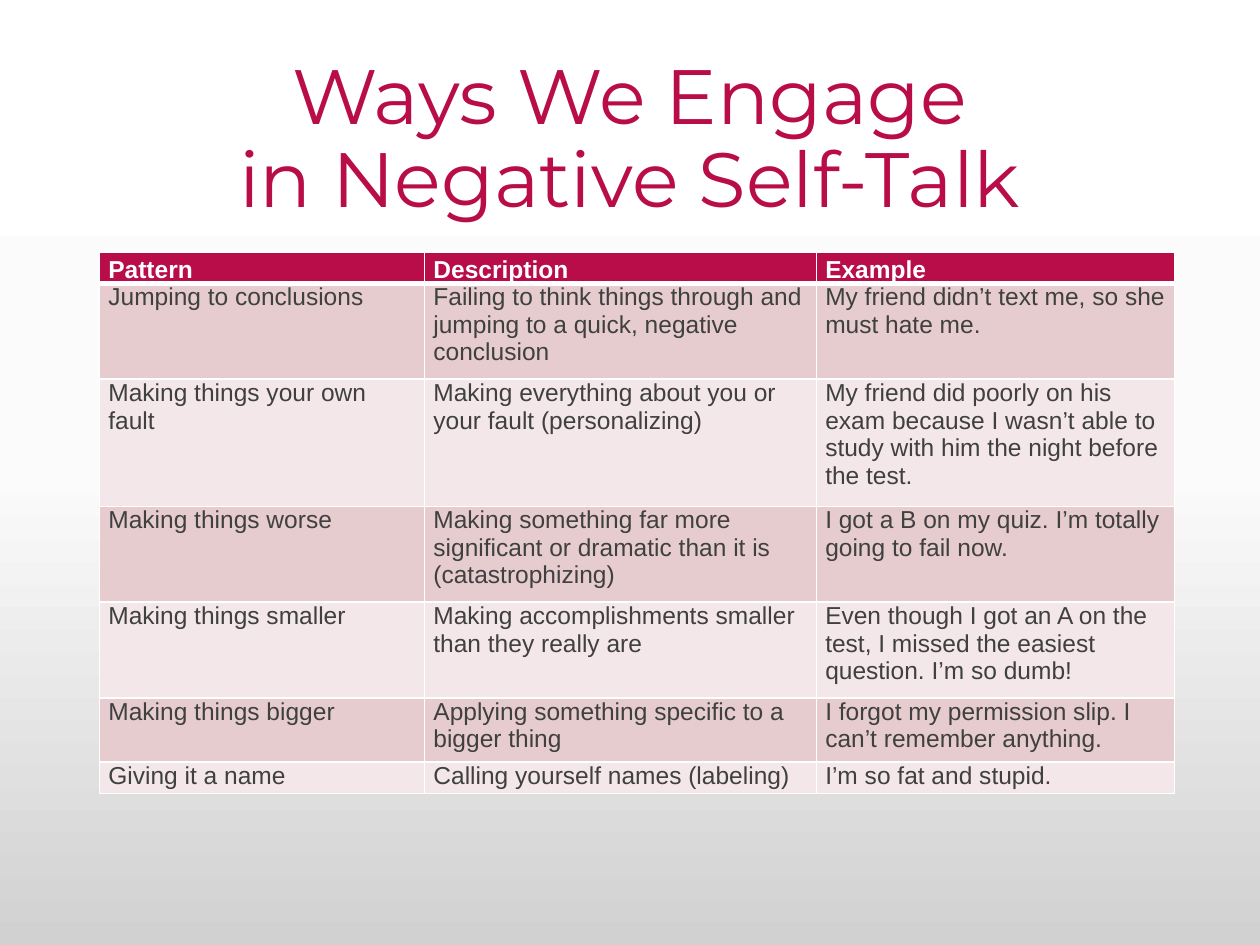
from copy import deepcopy

from lxml import etree
from pptx import Presentation
from pptx import util as u
from pptx.dml.color import RGBColor
from pptx.enum import text
from pptx.oxml.ns import qn

SLIDE_W, SLIDE_H = 10, 7.5
COLORS = {
    "crimson": "B80D48", "white": "FFFFFF", "ink": "3F403F",
    "band_dark": "E6CCCF", "band_light": "F3E7E9",
    "mist": "FBFBFB", "grey": "D1D1D1",
}
TITLE_LINES = ["Ways We Engage", "in Negative Self-Talk"]
COLUMN_WIDTHS = [2.58, 3.11, 2.84]
ROW_HEIGHTS = [0.25, 0.76, 1.01, 0.76, 0.76, 0.51, 0.25]
PATTERNS = [
    ("Pattern", "Description", "Example"),
    ("Jumping to conclusions",
     "Failing to think things through and jumping to a quick, negative conclusion",
     "My friend didn’t text me, so she must hate me."),
    ("Making things your own fault",
     "Making everything about you or your fault (personalizing)",
     "My friend did poorly on his exam because I wasn’t able to study with him "
     "the night before the test."),
    ("Making things worse",
     "Making something far more significant or dramatic than it is (catastrophizing)",
     "I got a B on my quiz. I’m totally going to fail now."),
    ("Making things smaller",
     "Making accomplishments smaller than they really are",
     "Even though I got an A on the test, I missed the easiest question. I’m so dumb!"),
    ("Making things bigger",
     "Applying something specific to a bigger thing",
     "I forgot my permission slip. I can’t remember anything."),
    ("Giving it a name",
     "Calling yourself names (labeling)",
     "I’m so fat and stupid."),
]


def rgb(name):
    return RGBColor.from_string(COLORS[name])


def add_run(paragraph, words, font, size, color, bold=False):
    run = paragraph.add_run()
    run.text = words
    run.font.name, run.font.size, run.font.bold = font, u.Pt(size), bold
    run.font.color.rgb = rgb(color)


def paint_background(slide):
    fill = slide.background.fill
    fill.gradient()
    fill.gradient_angle = 270
    # A new gradient has two stops; this one needs a third
    last_stop = fill.gradient_stops[-1]._gs
    last_stop.addnext(deepcopy(last_stop))
    shades = [(0, "white"), (0.5, "mist"), (1, "grey")]
    for stop, (position, color) in zip(fill.gradient_stops, shades):
        stop.position = position
        stop.color.rgb = rgb(color)


def add_title(slide):
    title = slide.shapes.add_textbox(
        u.Inches(0.069 * SLIDE_W), u.Inches(0.053 * SLIDE_H),
        u.Inches(0.862 * SLIDE_W), u.Inches(0.193 * SLIDE_H))
    frame = title.text_frame
    frame.word_wrap = True
    frame.vertical_anchor = text.MSO_ANCHOR.MIDDLE
    heading = frame.paragraphs[0]
    heading.alignment = text.PP_ALIGN.CENTER
    heading.line_spacing = 0.9
    for number, line in enumerate(TITLE_LINES):
        if number:
            heading.add_line_break()
        add_run(heading, line, "Montserrat", 44, "crimson")


def set_borders(cell, top, bottom):
    properties = cell._tc.get_or_add_tcPr()
    widths = {"lnL": 1, "lnR": 1, "lnT": top, "lnB": bottom}
    for place, (side, points) in enumerate(widths.items()):
        line = etree.Element(qn(f"a:{side}"), w=str(u.Pt(points)))
        solid = etree.SubElement(line, qn("a:solidFill"))
        etree.SubElement(solid, qn("a:srgbClr"), val=COLORS["white"])
        properties.insert(place, line)


def fill_cell(cell, words, row):
    header = row == 0
    cell.margin_left = cell.margin_right = u.Inches(0.07)
    cell.margin_top = cell.margin_bottom = 0
    cell.vertical_anchor = text.MSO_ANCHOR.BOTTOM if header else text.MSO_ANCHOR.TOP
    band = "crimson" if header else "band_dark" if row % 2 else "band_light"
    cell.fill.solid()
    cell.fill.fore_color.rgb = rgb(band)
    set_borders(cell, top=3 if row == 1 else 1, bottom=3 if header else 1)
    add_run(cell.text_frame.paragraphs[0], words, "Arial", 14,
            "white" if header else "ink", bold=header)


def add_pattern_table(slide):
    patterns = slide.shapes.add_table(
        len(ROW_HEIGHTS), len(COLUMN_WIDTHS),
        u.Inches(0.079 * SLIDE_W), u.Inches(2),
        u.Inches(sum(COLUMN_WIDTHS)), u.Inches(sum(ROW_HEIGHTS))).table
    for column, width in zip(patterns.columns, COLUMN_WIDTHS):
        column.width = u.Inches(width)
    for row, (height, entries) in enumerate(zip(ROW_HEIGHTS, PATTERNS)):
        patterns.rows[row].height = u.Inches(height)
        for column, words in enumerate(entries):
            fill_cell(patterns.cell(row, column), words, row)


def main():
    deck = Presentation()
    deck.slide_width, deck.slide_height = u.Inches(SLIDE_W), u.Inches(SLIDE_H)
    slide = deck.slides.add_slide(deck.slide_layouts[6])
    paint_background(slide)
    add_title(slide)
    add_pattern_table(slide)
    deck.save("out.pptx")


if __name__ == "__main__":
    main()
